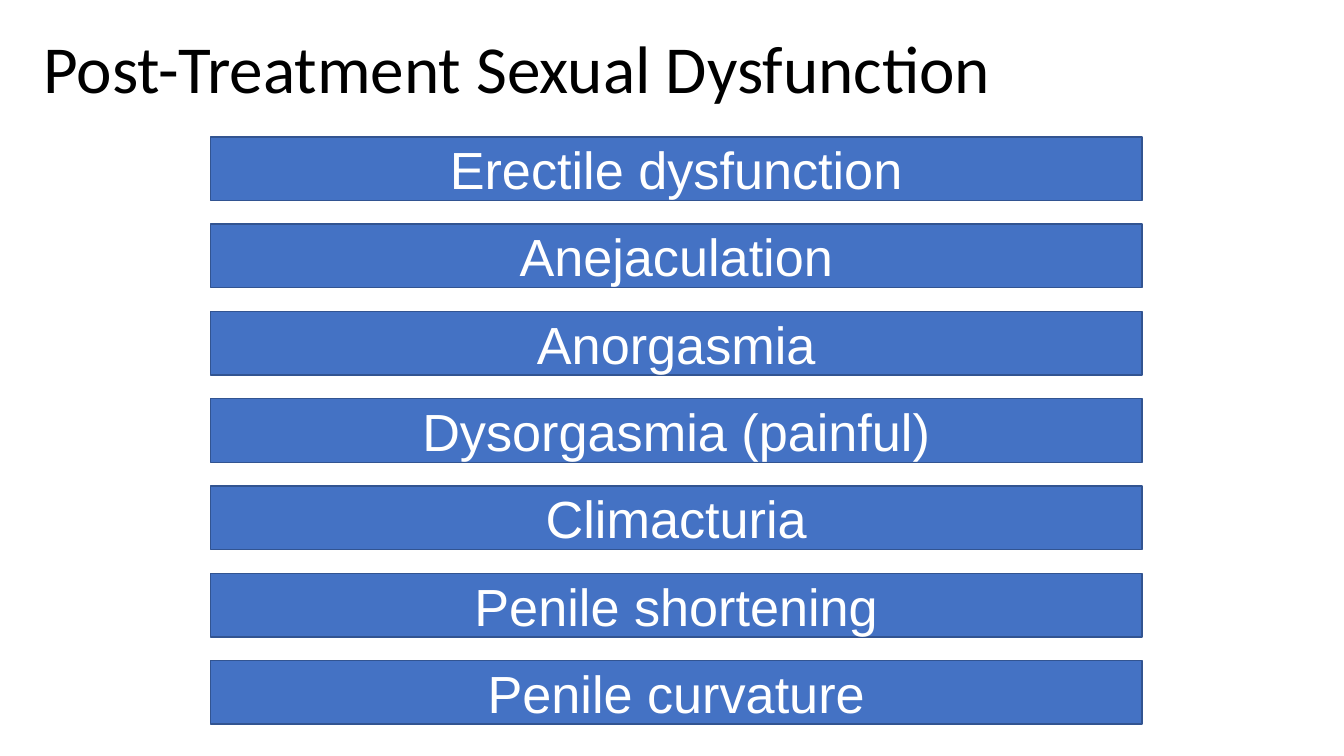
from dataclasses import dataclass

from pptx import Presentation
from pptx.dml.color import RGBColor
from pptx.enum.shapes import MSO_SHAPE
from pptx.enum.text import MSO_ANCHOR, PP_ALIGN
from pptx.slide import Slide
from pptx.text.text import TextFrame
from pptx.util import Cm, Pt

BLACK = RGBColor(0x00, 0x00, 0x00)
WHITE = RGBColor(0xFF, 0xFF, 0xFF)
BLUE = RGBColor(0x44, 0x72, 0xC4)
NAVY = RGBColor(0x32, 0x54, 0x91)

HEAD = {"name": "Calibri", "size": Pt(48), "color": BLACK}
BODY = {"name": "Arial", "size": Pt(37.3), "color": WHITE}

LEFT, TOP, WIDTH, HEIGHT = 5.31, 3.45, 23.47, 1.6
PITCH = 2.2


@dataclass
class Bar:
    text: str
    top: float


ISSUES = (
    "Erectile dysfunction",
    "Anejaculation",
    "Anorgasmia",
    "Dysorgasmia (painful)",
    "Climacturia",
    "Penile shortening",
    "Penile curvature",
)
BARS = [Bar(text, TOP + row * PITCH) for row, text in enumerate(ISSUES)]


def write(frame: TextFrame, text: str, style: dict, align: PP_ALIGN) -> None:
    frame.text = text
    frame.word_wrap = True
    frame.vertical_anchor = MSO_ANCHOR.MIDDLE
    para = frame.paragraphs[0]
    para.alignment = align
    font = para.runs[0].font
    for key, value in style.items():
        if key == "color":
            font.color.rgb = value
        else:
            setattr(font, key, value)


def add_title(slide: Slide, text: str) -> None:
    title = slide.shapes.title
    place = {"left": 0.84, "top": 0.28, "width": 32.18, "height": 3.05}
    for key, value in place.items():
        setattr(title, key, Cm(value))
    write(title.text_frame, text, HEAD, PP_ALIGN.LEFT)
    title.text_frame.paragraphs[0].line_spacing = 0.9


def add_bar(slide: Slide, bar: Bar) -> None:
    shape = slide.shapes.add_shape(
        MSO_SHAPE.RECTANGLE, Cm(LEFT), Cm(bar.top), Cm(WIDTH), Cm(HEIGHT)
    )
    shape.shadow.inherit = False
    shape.fill.solid()
    shape.fill.fore_color.rgb = BLUE
    shape.line.color.rgb = NAVY
    shape.line.width = Pt(1)
    write(shape.text_frame, bar.text, BODY, PP_ALIGN.CENTER)


def main() -> None:
    deck = Presentation()
    deck.slide_width, deck.slide_height = Cm(33.87), Cm(19.05)
    slide = deck.slides.add_slide(deck.slide_layouts.get_by_name("Title Only"))
    add_title(slide, "Post-Treatment Sexual Dysfunction")
    for bar in BARS:
        add_bar(slide, bar)
    deck.save("out.pptx")


if __name__ == "__main__":
    main()
